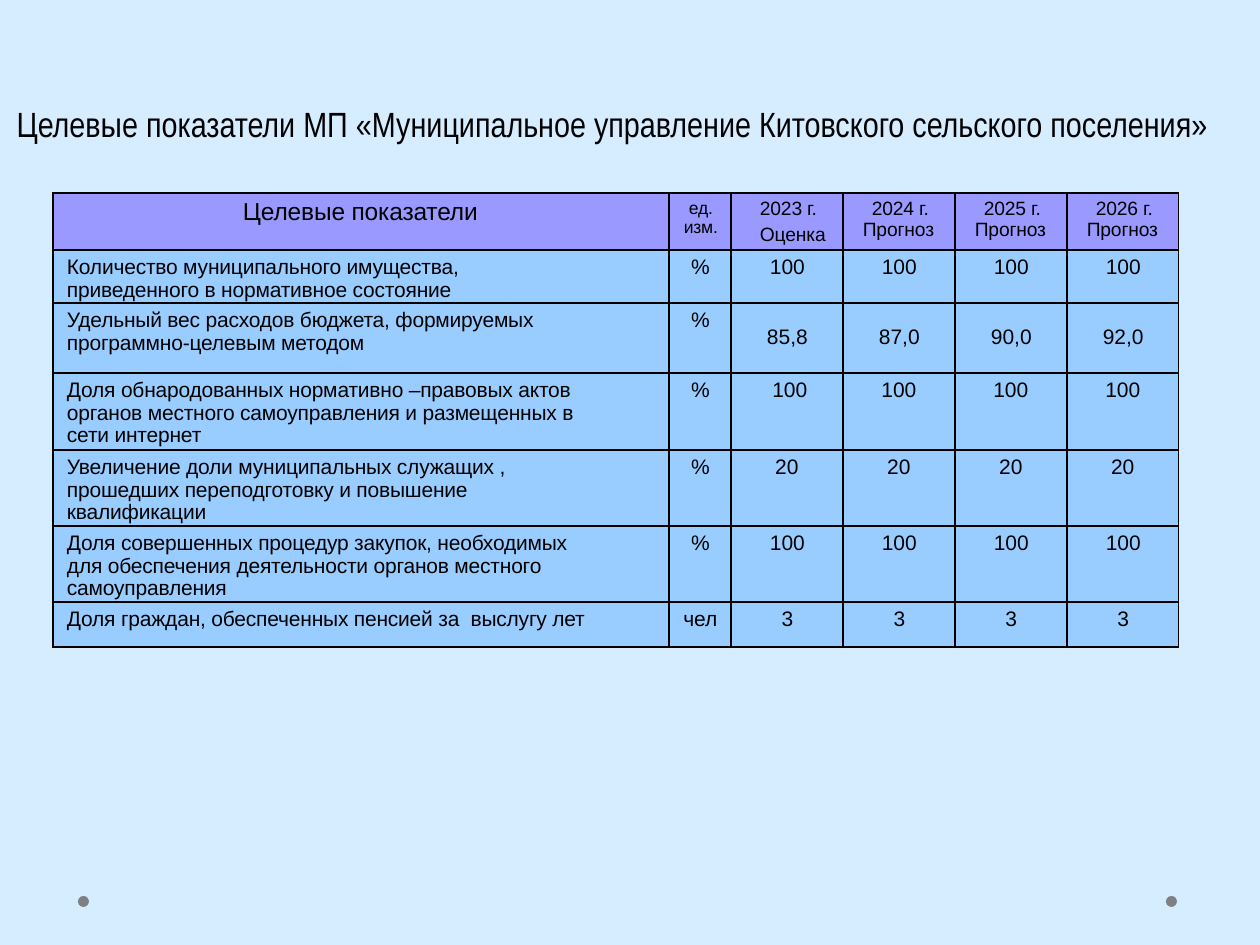
from dataclasses import dataclass

from lxml import etree
from pptx import Presentation
from pptx import util as u
from pptx.dml.color import RGBColor
from pptx.enum import shapes, text
from pptx.oxml.ns import qn

PX = 914400 / 126
BACKGROUND = RGBColor(0xD6, 0xEC, 0xFF)
HEADER_FILL = RGBColor(0x99, 0x99, 0xFF)
BODY_FILL = RGBColor(0x99, 0xCC, 0xFF)
DOT_FILL = RGBColor(0x80, 0x80, 0x80)
BLACK = RGBColor(0, 0, 0)
LEFT, CENTER = text.PP_ALIGN.LEFT, text.PP_ALIGN.CENTER

COLUMN_WIDTHS = [616, 62] + [112] * 4
HEADER_HEIGHT = 57
YEARS = ["2023 г.", "2024 г.", "2025 г.", "2026 г."]


@dataclass(frozen=True)
class Indicator:
    label: str
    unit: str
    values: tuple[str, ...]
    height: int
    hanging: int = 0
    middle: bool = False


INDICATORS = [
    Indicator("Количество муниципального имущества, приведенного в нормативное состояние",
              "%", ("100",) * 4, 53),
    Indicator("Удельный вес расходов бюджета, формируемых программно-целевым методом",
              "%", ("85,8", "87,0", "90,0", "92,0"), 70, middle=True),
    Indicator("Доля обнародованных нормативно –правовых актов органов местного "
              "самоуправления и размещенных в сети интернет",
              "%", (" 100", "100", "100", "100"), 77, hanging=28),
    Indicator("Увеличение доли муниципальных служащих , прошедших переподготовку "
              "и повышение квалификации",
              "%", ("20",) * 4, 76, hanging=28),
    Indicator("Доля совершенных процедур закупок, необходимых для обеспечения "
              "деятельности органов местного самоуправления",
              "%", ("100",) * 4, 76),
    Indicator("Доля граждан, обеспеченных пенсией за  выслугу лет",
              "чел", ("3",) * 4, 45),
]


def px(length: int) -> int:
    return round(length * PX)


def write(para, content: str, *, size: int = 12, font: str = "Arial",
          align=LEFT, left: int = 0, right: int = 0, first: int = 0,
          before: float = 3.3, leading: float | None = 0.97,
          tracking: int = 0) -> None:
    """Fill a paragraph; indents are in px, tracking in hundredths of a point."""
    para.alignment = align
    para.space_before = u.Pt(before)
    if leading:
        para.line_spacing = leading
    properties = para._p.get_or_add_pPr()
    for name, length in (("marL", left), ("marR", right), ("indent", first)):
        properties.set(name, str(px(length)))
    span = para.add_run()
    span.text = content
    span.font.size = u.Pt(size)
    span.font.name = font
    span.font.bold = False
    span.font.color.rgb = BLACK
    if tracking:
        span._r.get_or_add_rPr().set("spc", str(tracking))


def style_cell(cell, fill: RGBColor, *, middle: bool = False) -> None:
    """Set the insets, the black 1 pt borders and the fill."""
    cell.margin_left = cell.margin_right = px(9 if middle else 0)
    cell.margin_top = px(0 if middle else 6)
    cell.margin_bottom = 0
    cell.vertical_anchor = text.MSO_ANCHOR.MIDDLE if middle else text.MSO_ANCHOR.TOP
    properties = cell._tc.get_or_add_tcPr()
    for side in ("a:lnL", "a:lnR", "a:lnT", "a:lnB"):
        line = etree.SubElement(properties, qn(side), w=str(u.Pt(1)))
        solid = etree.SubElement(line, qn("a:solidFill"))
        etree.SubElement(solid, qn("a:srgbClr"), val=str(BLACK))
    cell.fill.solid()
    cell.fill.fore_color.rgb = fill


def fill_header(table) -> None:
    cells = list(table.rows[0].cells)
    for cell in cells:
        style_cell(cell, HEADER_FILL)
    write(cells[0].text_frame.paragraphs[0], "Целевые показатели",
          size=14, left=190, tracking=-10)
    write(cells[1].text_frame.paragraphs[0], "ед. изм.",
          size=10, left=15, first=5, tracking=-10)
    for index, (cell, year) in enumerate(zip(cells[2:], YEARS)):
        frame = cell.text_frame
        write(frame.paragraphs[0], year, size=11, left=29, before=3.2, tracking=-10)
        if index == 0:
            write(frame.add_paragraph(), "Оценка", size=11, left=29,
                  before=3.2, tracking=-10)
        else:
            write(frame.add_paragraph(), "Прогноз", size=11, left=20,
                  before=0, tracking=-10)


def fill_row(row, indicator: Indicator) -> None:
    label, unit, *values = row.cells
    for cell in (label, unit):
        style_cell(cell, BODY_FILL)
    write(label.text_frame.paragraphs[0], indicator.label,
          left=14, right=73, tracking=-10)
    write(unit.text_frame.paragraphs[0], indicator.unit, align=CENTER, left=1)
    for cell, value in zip(values, indicator.values):
        style_cell(cell, BODY_FILL, middle=indicator.middle)
        write(cell.text_frame.paragraphs[0], value, align=CENTER,
              left=1, first=-indicator.hanging)


def add_indicator_table(page) -> None:
    heights = [HEADER_HEIGHT] + [item.height for item in INDICATORS]
    table = page.shapes.add_table(
        len(heights), len(COLUMN_WIDTHS), px(53), px(193),
        px(sum(COLUMN_WIDTHS)), px(sum(heights))).table
    table.first_row = table.horz_banding = False
    for column, width in zip(table.columns, COLUMN_WIDTHS):
        column.width = px(width)
    for row, height in zip(table.rows, heights):
        row.height = px(height)
    fill_header(table)
    for row, indicator in zip(list(table.rows)[1:], INDICATORS):
        fill_row(row, indicator)


def add_dot(page, left: int) -> None:
    dot = page.shapes.add_shape(shapes.MSO_SHAPE.OVAL, px(left), px(896), px(11), px(11))
    dot.shadow.inherit = False
    dot.fill.solid()
    dot.fill.fore_color.rgb = DOT_FILL
    dot.line.fill.background()


def add_title(page) -> None:
    box = page.shapes.add_textbox(0, px(96), px(1225), px(82))
    box.text_frame.word_wrap = True
    write(box.text_frame.paragraphs[0],
          "Целевые показатели МП «Муниципальное управление Китовского сельского поселения»",
          size=20, font="Arial Narrow", align=CENTER, before=0, leading=None)


def main() -> None:
    deck = Presentation()
    deck.slide_width, deck.slide_height = px(1260), px(945)
    page = deck.slides.add_slide(deck.slide_layouts[6])
    page.background.fill.solid()
    page.background.fill.fore_color.rgb = BACKGROUND
    for left in (1166, 78):
        add_dot(page, left)
    add_indicator_table(page)
    add_title(page)
    deck.save("out.pptx")


if __name__ == "__main__":
    main()
